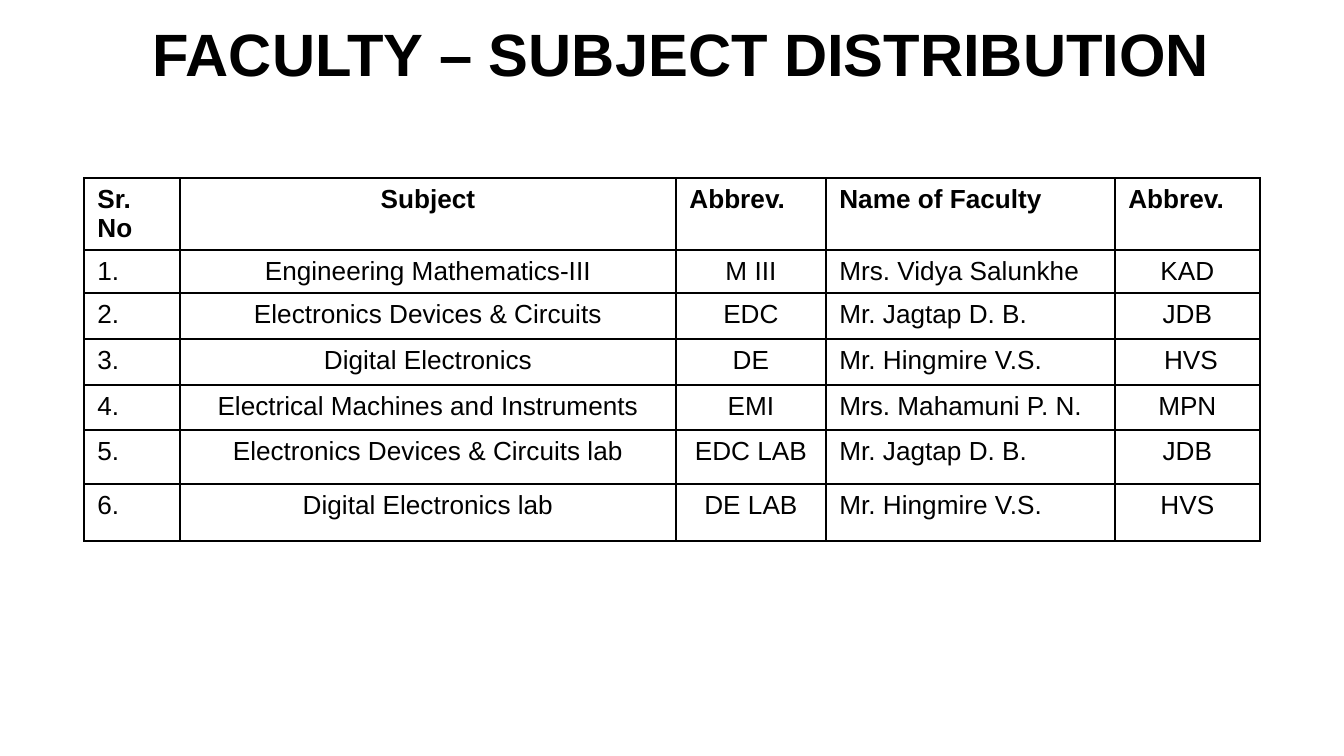
"""Build the faculty and subject distribution slide."""
import dataclasses

import pptx
import pptx.dml.color
import pptx.enum.text
import pptx.oxml
import pptx.oxml.ns
import pptx.util

EMU_PER_PX = 914400 / 134.4
LEFT = pptx.enum.text.PP_ALIGN.LEFT
CENTER = pptx.enum.text.PP_ALIGN.CENTER

COLUMN_WIDTHS = (96, 496, 150, 289, 145)
ROW_HEIGHTS = (72, 43, 46, 46, 45, 54, 57)
HEADER_ALIGNMENTS = (LEFT, CENTER, LEFT, LEFT, LEFT)
BODY_ALIGNMENTS = (LEFT, CENTER, CENTER, LEFT, CENTER)
HEADINGS = ("Sr.\nNo", "Subject", "Abbrev.", "Name of Faculty", "Abbrev.")
ASSIGNMENTS = (
    ("Engineering Mathematics-III", "M III", "Mrs. Vidya Salunkhe", "KAD"),
    ("Electronics Devices & Circuits", "EDC", "Mr. Jagtap D. B.", "JDB"),
    ("Digital Electronics", "DE", "Mr. Hingmire V.S.", " HVS"),
    ("Electrical Machines and Instruments", "EMI", "Mrs. Mahamuni P. N.", "MPN"),
    ("Electronics Devices & Circuits lab", "EDC LAB", "Mr. Jagtap D. B.", "JDB"),
    ("Digital Electronics lab", "DE LAB", "Mr. Hingmire V.S.", "HVS"),
)


@dataclasses.dataclass(frozen=True)
class Theme:
    font: str = "Arial"
    ink: str = "000000"
    paper: str = "FFFFFF"
    title_size: int = 32
    table_size: int = 14
    border_width: int = 1


THEME = Theme()


def px(length):
    return pptx.util.Emu(round(length * EMU_PER_PX))


def rgb(value):
    return pptx.dml.color.RGBColor.from_string(value)


def write(frame, text, size, bold, alignment):
    for index, line in enumerate(text.split("\n")):
        paragraph = frame.add_paragraph() if index else frame.paragraphs[0]
        paragraph.alignment = alignment
        run = paragraph.add_run()
        run.text = line
        run.font.name = THEME.font
        run.font.size = pptx.util.Pt(size)
        run.font.bold = bold
        run.font.color.rgb = rgb(THEME.ink)


def add_title(slide, text):
    title = slide.shapes.title
    title.left, title.top, title.width, title.height = map(px, (55, 26, 1253, 123))
    frame = title.text_frame
    frame.word_wrap = True
    frame.auto_size = pptx.enum.text.MSO_AUTO_SIZE.NONE
    frame.vertical_anchor = pptx.enum.text.MSO_ANCHOR.MIDDLE
    frame.margin_left = frame.margin_right = px(13)
    frame.margin_top, frame.margin_bottom = px(0), px(70)
    write(frame, text, THEME.title_size, True, CENTER)


def set_borders(cell):
    properties = cell._tc.get_or_add_tcPr()
    for position, edge in enumerate(("lnL", "lnR", "lnT", "lnB")):
        border = pptx.oxml.parse_xml(
            f'<a:{edge} {pptx.oxml.ns.nsdecls("a")} w="{pptx.util.Pt(THEME.border_width)}">'
            f'<a:solidFill><a:srgbClr val="{THEME.ink}"/></a:solidFill></a:{edge}>'
        )
        properties.insert(position, border)


def add_faculty_table(slide, left, top):
    entries = [HEADINGS]
    entries += [(f"{number}.", *row) for number, row in enumerate(ASSIGNMENTS, 1)]
    table = slide.shapes.add_table(
        len(ROW_HEIGHTS), len(COLUMN_WIDTHS), px(left), px(top),
        px(sum(COLUMN_WIDTHS)), px(sum(ROW_HEIGHTS)),
    ).table
    table.horz_banding = False
    for column, width in zip(table.columns, COLUMN_WIDTHS):
        column.width = px(width)
    for index, (row, height, texts) in enumerate(zip(table.rows, ROW_HEIGHTS, entries)):
        row.height = px(height)
        is_header = index == 0
        alignments = HEADER_ALIGNMENTS if is_header else BODY_ALIGNMENTS
        for cell, text, alignment in zip(row.cells, texts, alignments):
            cell.fill.solid()
            cell.fill.fore_color.rgb = rgb(THEME.paper)
            set_borders(cell)
            write(cell.text_frame, text, THEME.table_size, is_header, alignment)


def main():
    presentation = pptx.Presentation()
    presentation.slide_width, presentation.slide_height = px(1344), px(756)
    slide = presentation.slides.add_slide(presentation.slide_layouts[5])
    add_title(slide, "FACULTY – SUBJECT DISTRIBUTION")
    add_faculty_table(slide, 84, 178)
    presentation.save("out.pptx")


if __name__ == "__main__":
    main()
